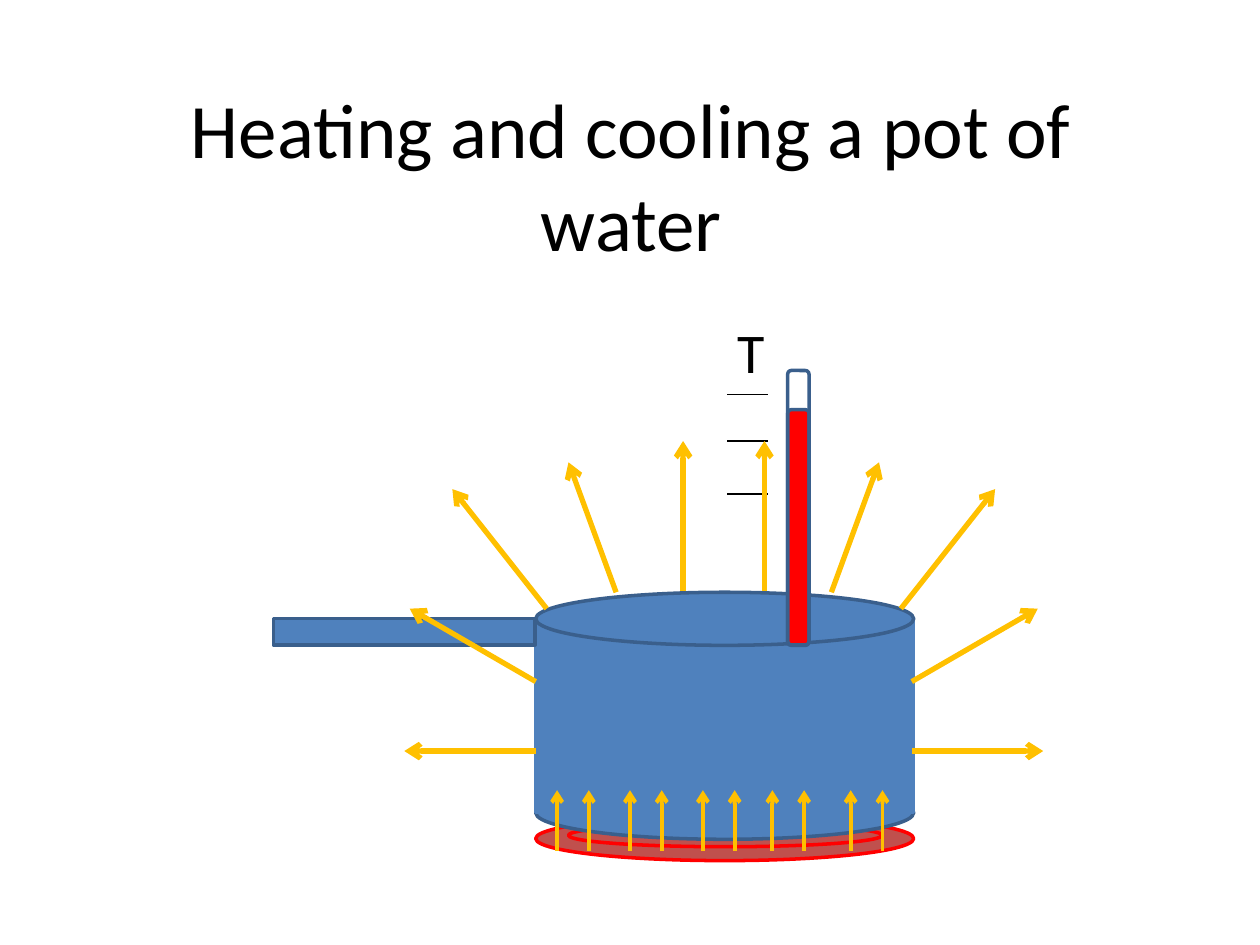
"""Build the slide on heating and cooling a pot of water."""
from dataclasses import dataclass

from lxml.etree import SubElement
from pptx import Presentation
from pptx.dml.color import RGBColor
from pptx.enum.shapes import MSO_CONNECTOR as Connector, MSO_SHAPE as Shape
from pptx.enum.text import MSO_ANCHOR as Anchor, PP_ALIGN as Align
from pptx.oxml.ns import qn
from pptx.util import Cm, Pt


@dataclass(frozen=True)
class Theme:
    font: str = "Calibri"
    title_size: int = 44
    label_size: int = 32
    text: str = "000000"
    pot: str = "4F81BD"
    outline: str = "3A5F8C"
    burner: str = "C0504D"
    hot: str = "FF0000"
    heat: str = "FFC000"


theme = Theme()


def write_text(shape, text, *, size, align=Align.LEFT, anchor=Anchor.TOP, wrap=True):
    frame = shape.text_frame
    frame.word_wrap = wrap
    frame.vertical_anchor = anchor
    paragraph = frame.paragraphs[0]
    paragraph.alignment = align
    run = paragraph.add_run()
    run.text = text
    run.font.name = theme.font
    run.font.size = Pt(size)
    run.font.color.rgb = RGBColor.from_string(theme.text)


def draw_line(shapes, start, end, *, color, width, arrow=False):
    ends = [Cm(value) for value in (*start, *end)]
    connector = shapes.add_connector(Connector.STRAIGHT, *ends)
    connector.line.color.rgb = RGBColor.from_string(color)
    connector.line.width = Pt(width)
    if arrow:
        SubElement(connector.line._get_or_add_ln(), qn("a:tailEnd"), type="arrow")
    SubElement(connector._element.spPr, qn("a:effectLst"))


presentation = Presentation()
presentation.slide_width = Cm(25.4)
presentation.slide_height = Cm(19.05)
slide = presentation.slides.add_slide(presentation.slide_layouts[5])

title = slide.shapes.title
title.left, title.top, title.width, title.height = Cm(1.93), Cm(1.47), Cm(21.59), Cm(4.09)
write_text(title, "Heating and cooling a pot of water", size=theme.title_size,
           align=Align.CENTER, anchor=Anchor.MIDDLE)

burner = slide.shapes.add_group_shape().shapes
pot = slide.shapes.add_group_shape().shapes
thermometer = slide.shapes.add_group_shape().shapes
solids = [
    (burner, Shape.OVAL, (10.8, 16.46, 7.62, 0.89), theme.burner, theme.hot),
    (burner, Shape.OVAL, (11.46, 16.61, 6.32, 0.46), theme.burner, theme.hot),
    (pot, Shape.OVAL, (10.8, 15.85, 7.62, 1.07), theme.pot, theme.outline),
    (pot, Shape.RECTANGLE, (10.8, 12.47, 7.62, 3.91), theme.pot, theme.pot),
    (pot, Shape.OVAL, (10.8, 11.94, 7.62, 1.07), theme.pot, theme.outline),
    (pot, Shape.RECTANGLE, (5.51, 12.47, 5.28, 0.53), theme.pot, theme.outline),
    (thermometer, Shape.ROUNDED_RECTANGLE, (15.88, 8.26, 0.43, 4.75), theme.hot, theme.outline),
    (thermometer, Shape.ROUNDED_RECTANGLE, (15.88, 7.47, 0.43, 5.53), None, theme.outline),
]
for shapes, kind, box, fill, outline in solids:
    shape = shapes.add_shape(kind, *[Cm(value) for value in box])
    shape.shadow.inherit = False
    if fill:
        shape.fill.solid()
        shape.fill.fore_color.rgb = RGBColor.from_string(fill)
    else:
        shape.fill.background()
    shape.line.color.rgb = RGBColor.from_string(outline)
    shape.line.width = Pt(2)

for y in (7.95, 8.89, 9.96):
    draw_line(slide.shapes, (14.66, y), (15.49, y), color=theme.text, width=0.75)

label = slide.shapes.add_textbox(Cm(14.61), Cm(6.27), Cm(1.07), Cm(1.63))
write_text(label, "T", size=theme.label_size, wrap=False)

flames = slide.shapes.add_group_shape().shapes
for pair_x in (11.23, 12.7, 14.17, 15.57, 17.15):
    for x in (pair_x, pair_x + 0.64):
        draw_line(flames, (x, 17.15), (x, 15.93), color=theme.heat, width=2.25, arrow=True)

rays = slide.shapes.add_group_shape().shapes
mirror_sum = 29.18
left_rays = [
    ((11.02, 12.27), (9.12, 9.86)),
    ((10.8, 13.74), (8.26, 12.27)),
    ((10.8, 15.14), (8.15, 15.14)),
    ((12.42, 11.94), (11.46, 9.32)),
    ((13.77, 11.91), (13.77, 8.89)),
]
for start, end in left_rays:
    mirrored = [(mirror_sum - x, y) for x, y in (start, end)]
    for ray in ((start, end), mirrored):
        draw_line(rays, *ray, color=theme.heat, width=3, arrow=True)

presentation.save("out.pptx")
